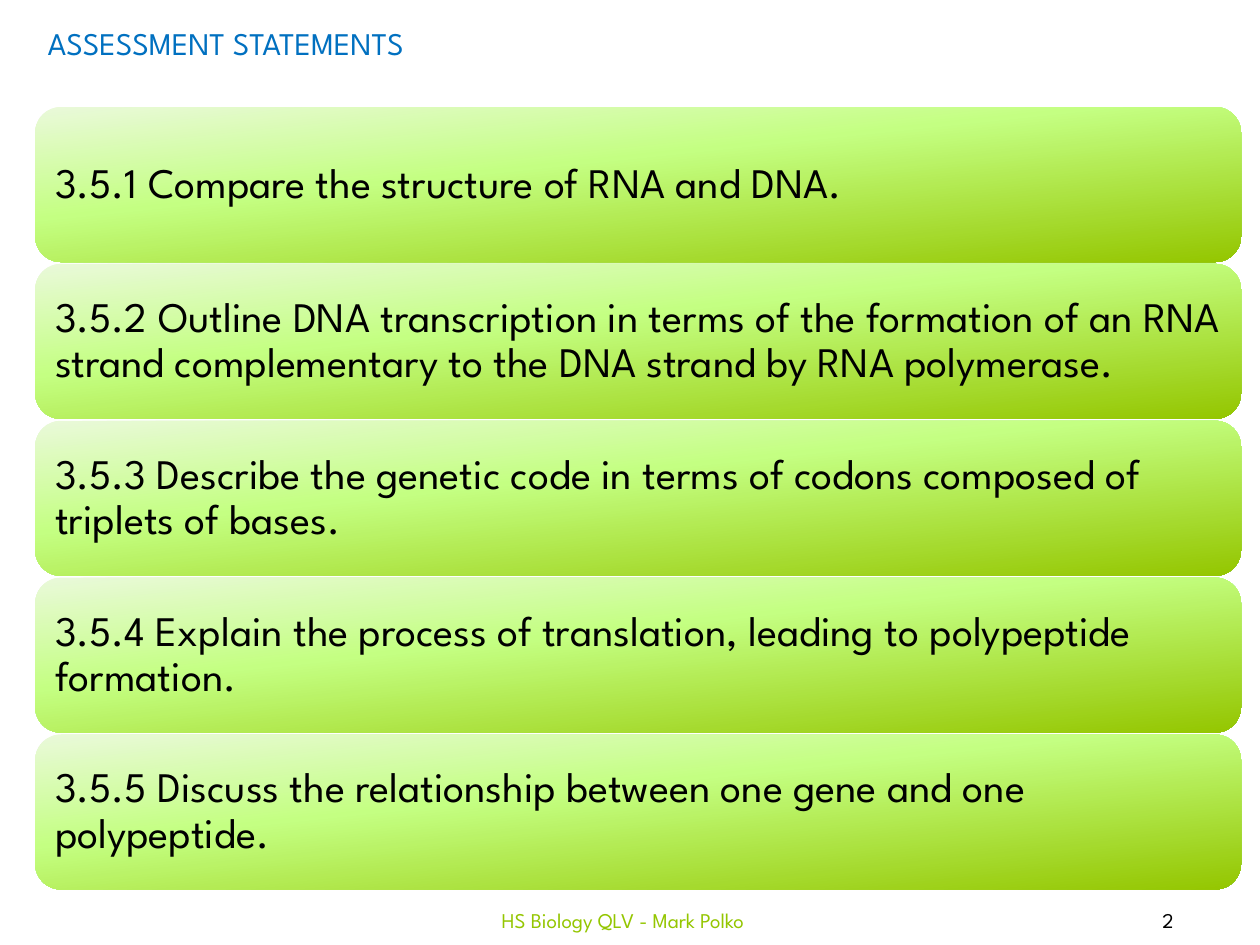
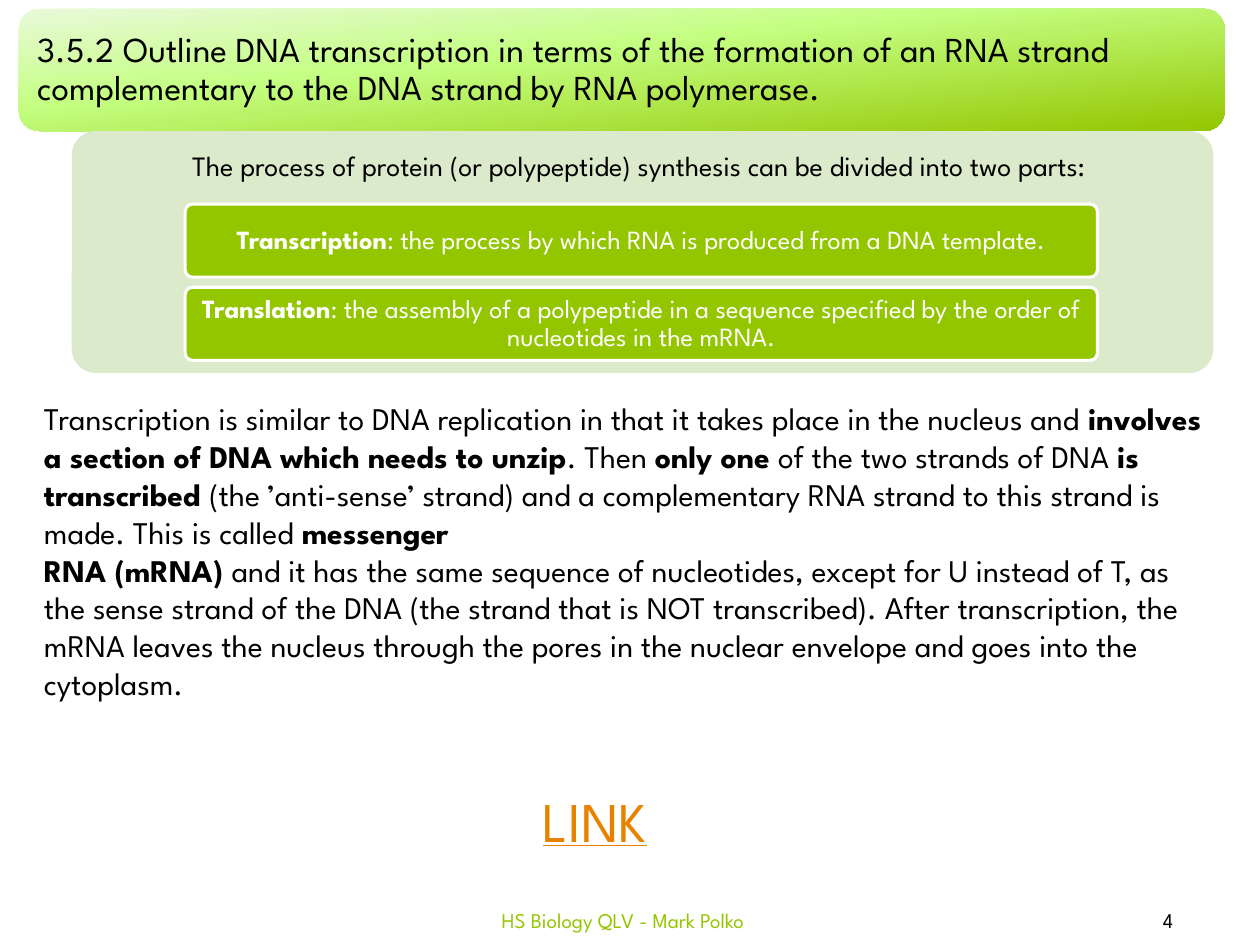
from copy import deepcopy

from pptx import Presentation
from pptx import util as u
from pptx.dml import color as c
from pptx.enum import shapes, text

FONT = "League Spartan"
COLORS = {
    "black": "000000",
    "white": "FFFFFF",
    "title": "0070C0",
    "green": "94C600",
    "bright": "C4FF82",
    "pale": "EAF9DA",
    "panel": "DCEACC",
    "link": "E68200",
}
BAND_STOPS = [(0, "pale"), (0.4, "bright"), (1, "green")]
FOOTER = "HS Biology QLV - Mark Polko"
STATEMENTS = [
    "3.5.1 Compare the structure of RNA and DNA.",
    "3.5.2 Outline DNA transcription in terms of the formation of an RNA strand "
    "complementary to the DNA strand by RNA polymerase.",
    "3.5.3 Describe the genetic code in terms of codons composed of triplets of bases.",
    "3.5.4 Explain the process of translation, leading to polypeptide formation.",
    "3.5.5 Discuss the relationship between one gene and one polypeptide.",
]
SYNTHESIS_INTRO = "The process of protein (or polypeptide) synthesis can be divided into two parts: "
SYNTHESIS_PARTS = [
    "*Transcription*: the process by which RNA is produced from a DNA template.",
    "*Translation*: the assembly of a polypeptide in a sequence specified by the order "
    "of nucleotides in the mRNA.",
]
EXPLANATION = [
    "Transcription is similar to DNA replication in that it takes place in the nucleus and "
    "*involves a section of DNA which needs to unzip*. Then *only one *of the two strands "
    "of DNA *is transcribed *(the ’anti-sense’ strand) and a complementary RNA strand to "
    "this strand is made. This is called *messenger*",
    "*RNA (mRNA) *and it has the same sequence of nucleotides, except for U instead of T, "
    "as the sense strand of the DNA (the strand that is NOT transcribed). After "
    "transcription, the mRNA leaves the nucleus through the pores in the nuclear envelope "
    "and goes into the cytoplasm.",
]
LEFT = text.PP_ALIGN.LEFT
CENTER = text.PP_ALIGN.CENTER
MIDDLE = text.MSO_ANCHOR.MIDDLE
TOP = text.MSO_ANCHOR.TOP


def color(name):
    return c.RGBColor.from_string(COLORS[name])


def apply(target, formats):
    for name, value in formats.items():
        setattr(target, name, value)


def write(shape, paragraphs, size, ink="black", align=LEFT, anchor=MIDDLE,
          inset=(0.1, 0.05), spacing=1.0, wrap=True, underline=False):
    frame = shape.text_frame
    across, down = map(u.Inches, inset)
    apply(frame, {
        "word_wrap": wrap, "vertical_anchor": anchor,
        "margin_left": across, "margin_right": across,
        "margin_top": down, "margin_bottom": down,
    })
    for index, wording in enumerate(paragraphs):
        paragraph = frame.add_paragraph() if index else frame.paragraphs[0]
        apply(paragraph, {"alignment": align, "line_spacing": spacing})
        for part, words in enumerate(wording.split("*")):
            if words:
                run = paragraph.add_run()
                run.text = words
                apply(run.font, {"name": FONT, "size": u.Pt(size),
                                 "bold": part % 2 == 1, "underline": underline})
                run.font.color.rgb = color(ink)


def add_label(slide, box, paragraphs, size, **style):
    write(slide.shapes.add_textbox(*map(u.Inches, box)), paragraphs, size, **style)


def add_rounded(slide, box):
    rounded = slide.shapes.add_shape(shapes.MSO_SHAPE.ROUNDED_RECTANGLE, *map(u.Inches, box))
    rounded.shadow.inherit = False
    rounded.line.fill.background()
    return rounded


def add_band(slide, left, top, height, statement, size):
    band = add_rounded(slide, (left, top, 9.57, height))
    band.fill.gradient()
    band.fill.gradient_angle = 276
    stops = band.element.xpath(".//a:gsLst")[0]
    stops.insert(1, deepcopy(stops[0]))
    for stop, (position, name) in zip(band.fill.gradient_stops, BAND_STOPS):
        stop.position = position
        stop.color.rgb = color(name)
    write(band, [statement], size, inset=(0.1, 0.1), spacing=0.9)


def add_solid(slide, box, fill):
    solid = add_rounded(slide, box)
    solid.adjustments[0] = 0.1
    solid.fill.solid()
    solid.fill.fore_color.rgb = color(fill)
    return solid


def add_synthesis_part(slide, top, wording):
    part = add_solid(slide, (1.47, top, 7.24, 0.58), "green")
    part.line.color.rgb = color("white")
    part.line.width = u.Pt(1.75)
    write(part, [wording], 15, ink="white", align=CENTER, inset=(0.04, 0.03), spacing=0.9)


def add_page(deck, number):
    slide = deck.slides.add_slide(deck.slide_layouts[6])
    add_label(slide, (8.54, 7.1, 1.46, 0.4), [str(number)], 12, align=CENTER)
    add_label(slide, (3.03, 7.1, 3.83, 0.4), [FOOTER], 12, ink="green", align=CENTER)
    return slide


def build_statements(deck):
    slide = add_page(deck, 2)
    add_label(slide, (0.28, 0.14, 3.21, 0.71), ["ASSESSMENT STATEMENTS"], 18,
              ink="title", anchor=TOP, wrap=False)
    pitch = (5.83 - 0.85) / (len(STATEMENTS) - 1)
    for row, statement in enumerate(STATEMENTS):
        add_band(slide, 0.28, 0.85 + row * pitch, 1.23, statement, 24)


def build_transcription(deck):
    slide = add_page(deck, 4)
    add_band(slide, 0.15, 0.07, 0.97, STATEMENTS[1], 20)
    add_solid(slide, (0.57, 1.04, 9.06, 1.92), "panel")
    add_label(slide, (0.57, 1.04, 9.06, 0.58), [SYNTHESIS_INTRO], 16,
              align=CENTER, inset=(0.07, 0.07), spacing=0.9)
    for row, wording in enumerate(SYNTHESIS_PARTS):
        add_synthesis_part(slide, 1.62 + row * 0.66, wording)
    add_label(slide, (0.25, 3.12, 9.42, 2.52), EXPLANATION, 18, anchor=TOP)
    add_label(slide, (4.21, 6.19, 1.11, 0.64), ["LINK"], 32,
              ink="link", anchor=TOP, wrap=False, underline=True)


def main():
    deck = Presentation()
    apply(deck, {"slide_width": u.Inches(10), "slide_height": u.Inches(7.5)})
    build_statements(deck)
    build_transcription(deck)
    deck.save("out.pptx")


if __name__ == "__main__":
    main()
